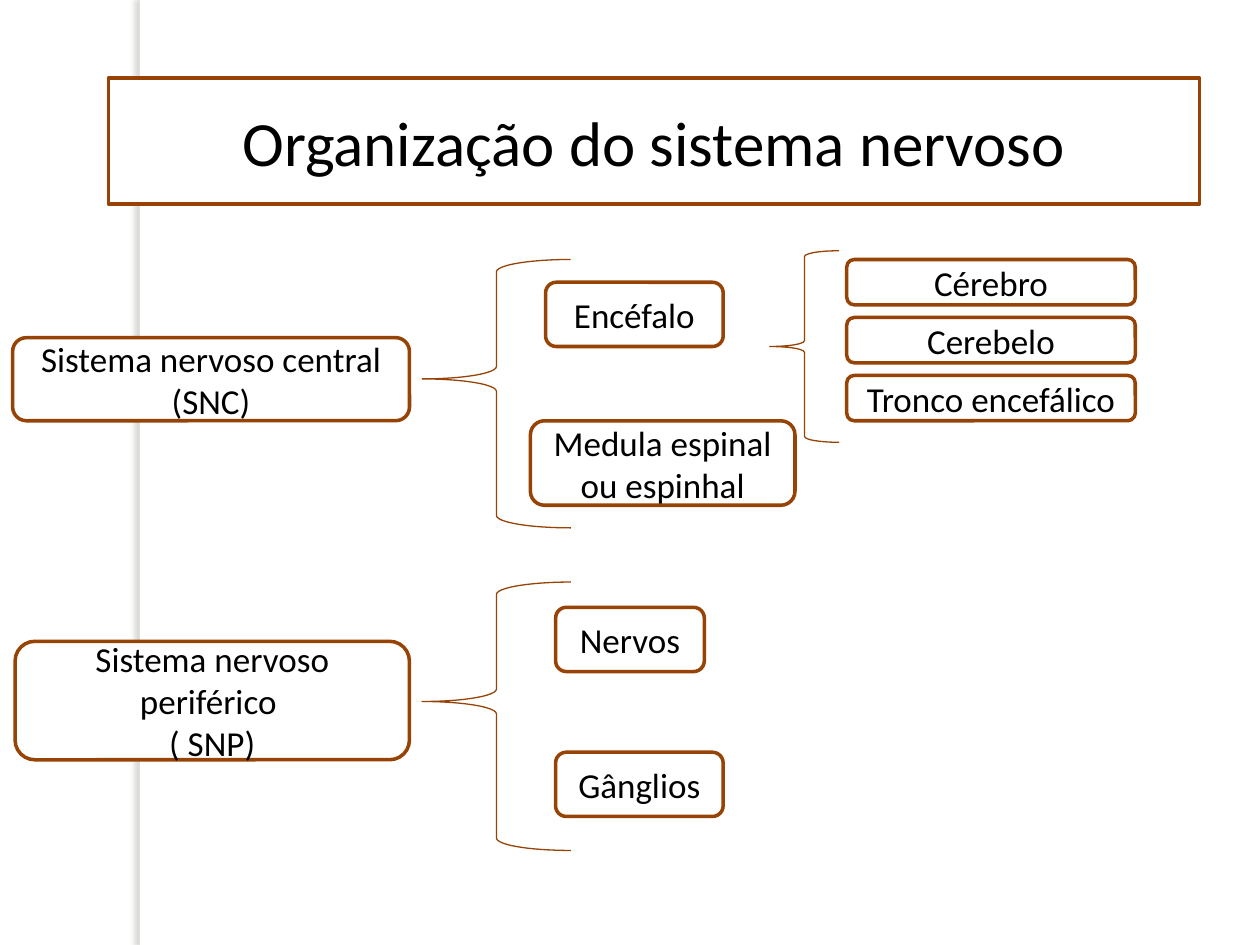
from lxml.etree import SubElement
from pptx import Presentation
from pptx.dml.color import RGBColor
from pptx.enum.shapes import MSO_SHAPE
from pptx.enum.text import MSO_ANCHOR, MSO_AUTO_SIZE, PP_ALIGN
from pptx.oxml import parse_xml
from pptx.oxml.ns import nsdecls, qn
from pptx.util import Inches, Pt

COLORS = {"paper": "FFFFFF", "outline": "964305", "text": "000000", "shade": "736F63"}
FONT = "Calibri"


def color(name):
    return RGBColor.from_string(COLORS[name])


def write(shape, text, size=20, align=PP_ALIGN.CENTER, anchor=MSO_ANCHOR.MIDDLE):
    """Fill the shape with text, one paragraph per line."""
    frame = shape.text_frame
    frame.word_wrap = True
    frame.auto_size = MSO_AUTO_SIZE.NONE
    frame.vertical_anchor = anchor
    frame.text = text
    for paragraph in frame.paragraphs:
        paragraph.alignment = align
        paragraph.font.name = FONT
        paragraph.font.size = Pt(size)
        paragraph.font.color.rgb = color("text")


class DiagramSlide:
    def __init__(self, presentation):
        self.slide = presentation.slides.add_slide(presentation.slide_layouts[5])
        self.shapes = self.slide.shapes

    def add(self, preset, left, top, width, height):
        shape = self.shapes.add_shape(
            preset, Inches(left), Inches(top), Inches(width), Inches(height))
        shape.shadow.inherit = False
        return shape

    def frame(self, shape):
        """Give the shape the white fill and brown outline of every label."""
        shape.fill.solid()
        shape.fill.fore_color.rgb = color("paper")
        shape.line.color.rgb = color("outline")
        shape.line.width = Pt(2)

    def title(self, text, left, top, width, height):
        title = self.shapes.title
        title.left, title.top = Inches(left), Inches(top)
        title.width, title.height = Inches(width), Inches(height)
        title.element.spPr.find(qn("a:xfrm")).addnext(parse_xml(
            f'<a:prstGeom {nsdecls("a")} prst="roundRect"><a:avLst/></a:prstGeom>'))
        self.frame(title)
        write(title, text, size=36)

    def label(self, text, left, top, width, height):
        label = self.add(MSO_SHAPE.ROUNDED_RECTANGLE, left, top, width, height)
        self.frame(label)
        write(label, text)

    def brace(self, left, top, width, height, tip=0.5):
        brace = self.add(MSO_SHAPE.LEFT_BRACE, left, top, width, height)
        brace.adjustments[1] = tip
        brace.fill.background()
        brace.line.color.rgb = color("outline")
        brace.line.width = Pt(0.75)

    def side_strip(self, left, width, height):
        """Draw the white strip with a soft shadow, behind everything else."""
        strip = self.add(MSO_SHAPE.RECTANGLE, left, 0, width, height)
        strip.fill.solid()
        strip.fill.fore_color.rgb = color("paper")
        strip.line.fill.background()
        effects = strip.element.spPr.find(qn("a:effectLst"))
        shadow = SubElement(effects, qn("a:outerShdw"), blurRad=str(Pt(3)),
                            dist=str(Pt(3)), dir=str(180 * 60000),
                            algn="ctr", rotWithShape="0")
        shade = SubElement(shadow, qn("a:srgbClr"), val=COLORS["shade"])
        SubElement(shade, qn("a:alpha"), val="25000")
        self.shapes.element.insert(2, strip.element)


def main():
    presentation = Presentation()
    presentation.slide_width, presentation.slide_height = Inches(10), Inches(7.5)
    diagram = DiagramSlide(presentation)

    diagram.side_strip(1.11, 0.08, 7.5)
    diagram.title("Organização do sistema nervoso", 0.86, 0.62, 8.66, 1)

    for brace_top in (4.62, 2.06):
        diagram.brace(3.35, brace_top, 1.18, 2.13, tip=0.445)

    for text, *box in (
        ("Encéfalo", 4.33, 2.24, 1.41, 0.51),
        ("Medula espinal ou espinhal", 4.21, 3.34, 2.1, 0.67),
        ("Nervos", 4.41, 4.82, 1.18, 0.51),
        ("Gânglios", 4.41, 5.97, 1.33, 0.51),
        ("Sistema nervoso central (SNC)", 0.1, 2.68, 3.15, 0.66),
        ("Sistema nervoso periférico \n( SNP)", 0.12, 5.09, 3.13, 0.94),
    ):
        diagram.label(text, *box)

    diagram.brace(6.11, 1.99, 0.55, 1.52)
    for row, part in enumerate(("Cérebro", "Cerebelo", "Tronco encefálico")):
        diagram.label(part, 6.72, 2.06 + row * 0.46, 2.29, 0.36)

    presentation.save("out.pptx")


if __name__ == "__main__":
    main()
